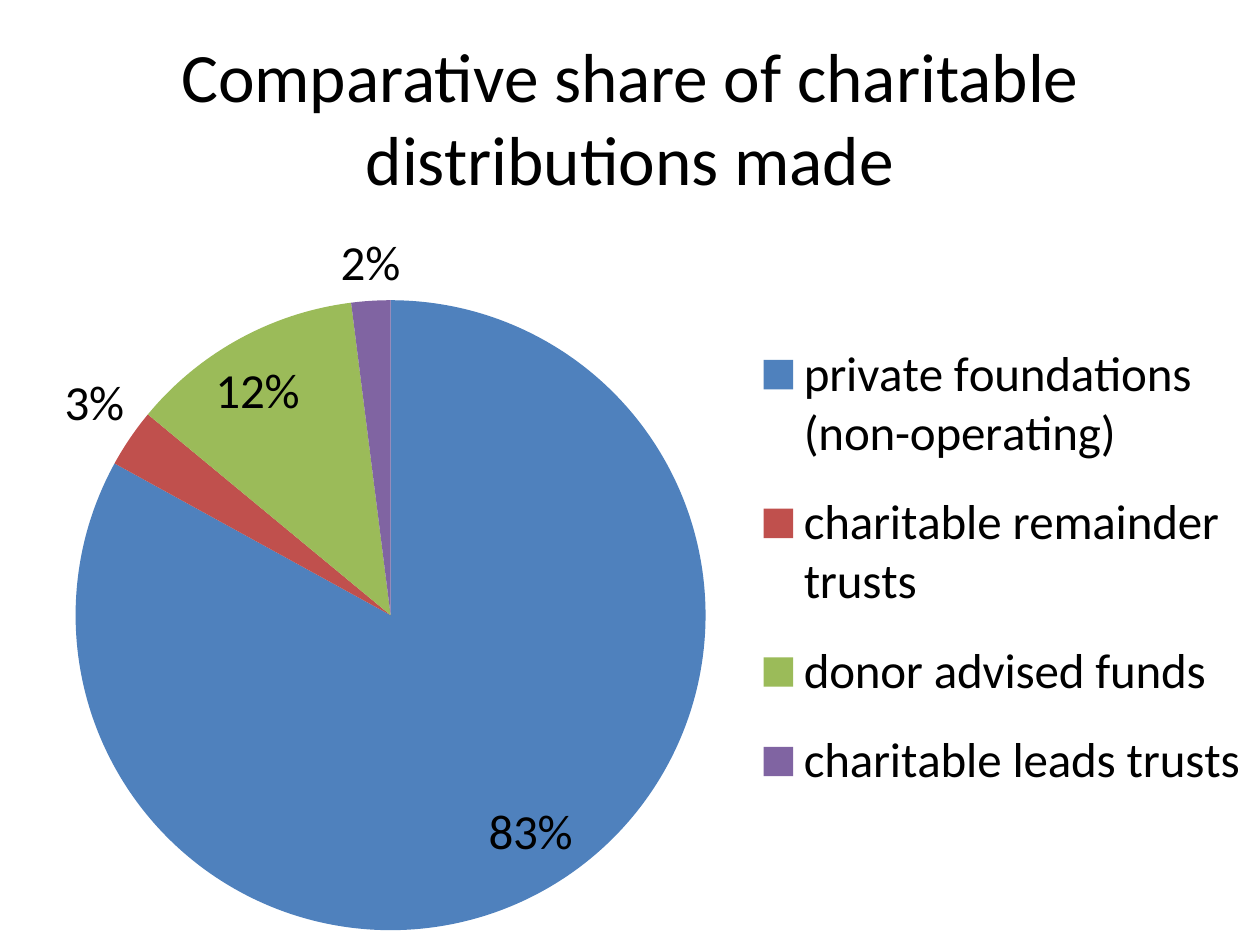
from lxml import etree
from pptx import Presentation
from pptx import util as u
from pptx.chart.data import CategoryChartData
from pptx.dml.color import RGBColor
from pptx.enum import chart as ch, text
from pptx.oxml import ns


def tint(code):
    return RGBColor.from_string(code)


class Deck:
    """Holds the style and the current slide."""

    face = "Calibri"
    ink = "000000"
    hues = ["4F81BD", "C0504D", "9BBB59", "8064A2"]

    def __init__(self):
        self.prs = Presentation()
        self.prs.slide_width = u.Inches(10)
        self.prs.slide_height = u.Inches(7.5)
        self.slide = self.prs.slides.add_slide(self.prs.slide_layouts[5])

    def style(self, font, size):
        font.name = self.face
        font.size = u.Pt(size)
        font.color.rgb = tint(self.ink)

    def title(self, words, x, y, w, h):
        box = self.slide.shapes.title
        box.left, box.top, box.width, box.height = map(u.Inches, (x, y, w, h))
        frame = box.text_frame
        frame.text = words
        frame.word_wrap = True
        frame.vertical_anchor = text.MSO_ANCHOR.MIDDLE
        para = frame.paragraphs[0]
        para.alignment = text.PP_ALIGN.CENTER
        self.style(para.runs[0].font, 39.6)

    def place(self, item, inner=False, **sizes):
        old = item.find(ns.qn("c:layout"))
        if old is not None:
            item.remove(old)
        area = etree.Element(ns.qn("c:layout"))
        spot = etree.SubElement(area, ns.qn("c:manualLayout"))
        modes = {"layoutTarget": "inner"} if inner else {}
        modes.update(xMode="edge", yMode="edge", **sizes)
        for name, val in modes.items():
            etree.SubElement(spot, ns.qn("c:" + name)).set("val", str(val))
        return area

    def pie(self, shares, x, y, w, h):
        data = CategoryChartData()
        data.categories = list(shares)
        data.add_series("Series 1", list(shares.values()))
        spot = map(u.Inches, (x, y, w, h))
        chart = self.slide.shapes.add_chart(ch.XL_CHART_TYPE.PIE, *spot, data).chart
        self.style(chart.font, 28)
        chart.has_title = False
        chart.has_legend = True
        key = chart.legend
        key.position = ch.XL_LEGEND_POSITION.RIGHT
        key.include_in_layout = False
        self.style(key.font, 28)
        plot = chart.plots[0]
        plot.vary_by_categories = True
        for i, hue in enumerate(self.hues):
            fill = plot.series[0].points[i].format.fill
            fill.solid()
            fill.fore_color.rgb = tint(hue)
        plot.has_data_labels = True
        tags = plot.data_labels
        tags.show_percentage = True
        tags.show_value = False
        tags.number_format = "0%"
        tags.number_format_is_linked = False
        tags.position = ch.XL_LABEL_POSITION.BEST_FIT
        self.style(tags.font, 28)
        root = chart.element
        area = root.find(".//" + ns.qn("c:plotArea"))
        area.insert(0, self.place(area, inner=True, x=0.06, y=0.11, w=0.5, h=0.87))
        side = root.find(".//" + ns.qn("c:legend"))
        side.insert(1, self.place(side, x=0.59, y=0.13, w=0.41, h=0.7))


def main():
    deck = Deck()
    deck.title("Comparative share of charitable distributions made", 0, 0.3, 10, 1.25)
    shares = {
        "private foundations (non-operating)": 83,
        "charitable remainder trusts": 3,
        "donor advised funds": 12,
        "charitable leads trusts": 2,
    }
    deck.pie(shares, 0, 1.75, 10, 5.75)
    deck.prs.save("out.pptx")


if __name__ == "__main__":
    main()
